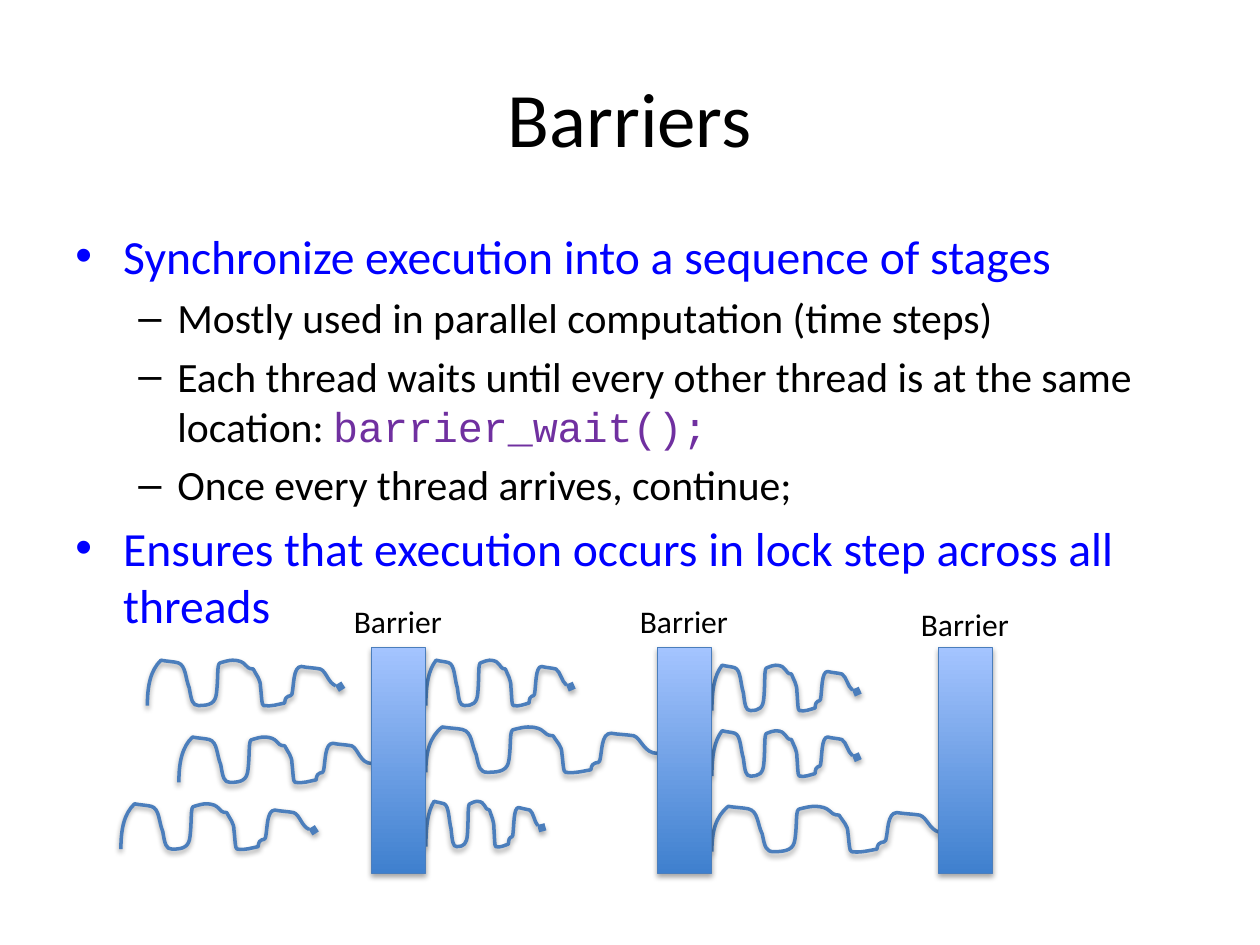
import pptx
import pptx.dml.color
import pptx.enum.shapes
import pptx.enum.text
import pptx.oxml
import pptx.oxml.ns
import pptx.util
from pptx.util import Inches

RGBColor = pptx.dml.color.RGBColor
BLACK = RGBColor(0x00, 0x00, 0x00)
BLUE = RGBColor(0x00, 0x00, 0xFF)
PURPLE = RGBColor(0x70, 0x30, 0xA0)
OUTLINE = RGBColor(0x4B, 0x7E, 0xBC)
BAR_DARK = RGBColor(0x3F, 0x80, 0xCE)
BAR_LIGHT = RGBColor(0xA4, 0xC4, 0xFF)
NAMESPACE = pptx.oxml.ns.nsdecls("a")

# Thread path in hundredths of an inch: two Bezier controls, then end point
THREAD_WIDTH = 184
THREAD_START = (0, 36)
THREAD_CURVES = [
    ((0, 20), (3, 8), (13, 0)),
    ((19, 1), (24, 1), (29, 2)),
    ((37, 4), (36, 14), (40, 22)),
    ((42, 32), (43, 36), (49, 36)),
    ((60, 36), (65, 34), (66, 26)),
    ((68, 12), (66, 2), (70, 2)),
    ((74, 1), (78, 0), (81, 0)),
    ((96, 0), (92, 7), (101, 7)),
    ((104, 12), (108, 15), (108, 21)),
    ((109, 28), (109, 36), (111, 36)),
    ((118, 37), (125, 35), (131, 34)),
    ((132, 26), (137, 30), (138, 27)),
    ((140, 20), (139, 5), (147, 5)),
    ((153, 6), (159, 6), (165, 7)),
    ((171, 9), (173, 21), (184, 21)),
]


class SlideBuilder:
    font = "Calibri"
    code_font = "Courier New"

    def __init__(self, slide):
        self.slide = slide

    def add_run(self, paragraph, text, size, color=BLACK, font=None):
        run = paragraph.add_run()
        run.text = text
        run.font.name = font or self.font
        run.font.size = pptx.util.Pt(size)
        run.font.color.rgb = color

    def add_text_box(self, left, top, width, height, wrap=True):
        shape = self.slide.shapes.add_textbox(
            Inches(left), Inches(top), Inches(width), Inches(height))
        shape.text_frame.word_wrap = wrap
        return shape.text_frame

    def add_title(self, text):
        frame = self.add_text_box(0.5, 0.3, 9, 1.25)
        frame.vertical_anchor = pptx.enum.text.MSO_ANCHOR.MIDDLE
        frame.paragraphs[0].alignment = pptx.enum.text.PP_ALIGN.CENTER
        self.add_run(frame.paragraphs[0], text, 44)

    def add_bullets(self, items):
        frame = self.add_text_box(0.5, 1.75, 9, 2.8)
        for index, (level, text, code) in enumerate(items):
            paragraph = frame.add_paragraph() if index else frame.paragraphs[0]
            size, color, margin, indent, mark = (
                (23.8, BLACK, 0.81, -0.31, "–") if level
                else (27.2, BLUE, 0.38, -0.38, "•"))
            paragraph.level = level
            paragraph.space_before = pptx.util.Pt(round(size * 0.2, 1))
            properties = paragraph._p.get_or_add_pPr()
            properties.set("marL", str(Inches(margin)))
            properties.set("indent", str(Inches(indent)))
            for xml in (f'<a:buFont {NAMESPACE} typeface="Arial"/>',
                        f'<a:buChar {NAMESPACE} char="{mark}"/>'):
                properties.append(pptx.oxml.parse_xml(xml))
            self.add_run(paragraph, text, size, color)
            if code:
                self.add_run(paragraph, code, size, PURPLE, self.code_font)

    def add_label(self, text, left, top):
        frame = self.add_text_box(left, top, 0.91, 0.4, wrap=False)
        frame.auto_size = pptx.enum.text.MSO_AUTO_SIZE.SHAPE_TO_FIT_TEXT
        self.add_run(frame.paragraphs[0], text, 18)

    def style_outline(self, shape, width):
        shape.line.color.rgb = OUTLINE
        shape.line.width = pptx.util.Pt(width)
        shape.shadow.inherit = False
        effects = shape.element.spPr.find(pptx.oxml.ns.qn("a:effectLst"))
        effects.append(pptx.oxml.parse_xml(
            f'<a:outerShdw {NAMESPACE} blurRad="40000" dist="23000" '
            'dir="5400000" rotWithShape="0"><a:srgbClr val="000000">'
            '<a:alpha val="35000"/></a:srgbClr></a:outerShdw>'))

    def add_thread(self, left, top, width, waiting):
        scale = (Inches(width) / THREAD_WIDTH, Inches(0.01))
        builder = self.slide.shapes.build_freeform(*THREAD_START, scale=scale)
        builder.add_line_segments([curve[-1] for curve in THREAD_CURVES], close=False)
        shape = builder.convert_to_shape(Inches(left), Inches(top))
        # Bend each straight segment into its curve
        segments = list(shape.element.spPr.iter(pptx.oxml.ns.qn("a:lnTo")))
        for segment, curve in zip(segments, THREAD_CURVES):
            points = "".join(f'<a:pt x="{x}" y="{y}"/>' for x, y in curve)
            segment.getparent().replace(segment, pptx.oxml.parse_xml(
                f"<a:cubicBezTo {NAMESPACE}>{points}</a:cubicBezTo>"))
        shape.fill.background()
        self.style_outline(shape, 2)
        if waiting:
            line = shape.element.spPr.find(pptx.oxml.ns.qn("a:ln"))
            line.append(pptx.oxml.parse_xml(
                f'<a:tailEnd {NAMESPACE} type="diamond"/>'))

    def add_barrier(self, left):
        shape = self.slide.shapes.add_shape(
            pptx.enum.shapes.MSO_SHAPE.RECTANGLE,
            Inches(left), Inches(5.14), Inches(0.43), Inches(1.79))
        shape.fill.gradient()
        shape.fill.gradient_angle = 90
        for stop, color in zip(shape.fill.gradient_stops, (BAR_DARK, BAR_LIGHT)):
            stop.color.rgb = color
        self.style_outline(shape, 0.75)


def main():
    presentation = pptx.Presentation()
    presentation.slide_width = Inches(10)
    presentation.slide_height = Inches(7.5)
    slide = presentation.slides.add_slide(presentation.slide_layouts[6])
    builder = SlideBuilder(slide)

    # Title and bullets
    builder.add_title("Barriers")
    builder.add_bullets([
        (0, "Synchronize execution into a sequence of stages", None),
        (1, "Mostly used in parallel computation (time steps)", None),
        (1, "Each thread waits until every other thread is at the same location: ",
         "barrier_wait();"),
        (1, "Once every thread arrives, continue;", None),
        (0, "Ensures that execution occurs in lock step across all threads", None),
    ])

    # Threads: left, top, width, waiting before the barrier
    for thread in [
        (1.17, 5.24, 1.53, True), (1.42, 5.85, 1.53, False),
        (0.96, 6.38, 1.53, True),
        (3.38, 5.24, 1.15, True), (3.38, 5.77, 1.84, False),
        (3.38, 6.36, 0.92, True),
        (5.65, 5.28, 1.15, True), (5.65, 5.8, 1.15, True),
        (5.65, 6.4, 1.84, True),
    ]:
        builder.add_thread(*thread)

    # Barriers with their labels
    for left, label_top in [(2.95, 4.73), (5.22, 4.73), (7.45, 4.75)]:
        builder.add_barrier(left)
        builder.add_label("Barrier", left - 0.24, label_top)

    presentation.save("out.pptx")


if __name__ == "__main__":
    main()
